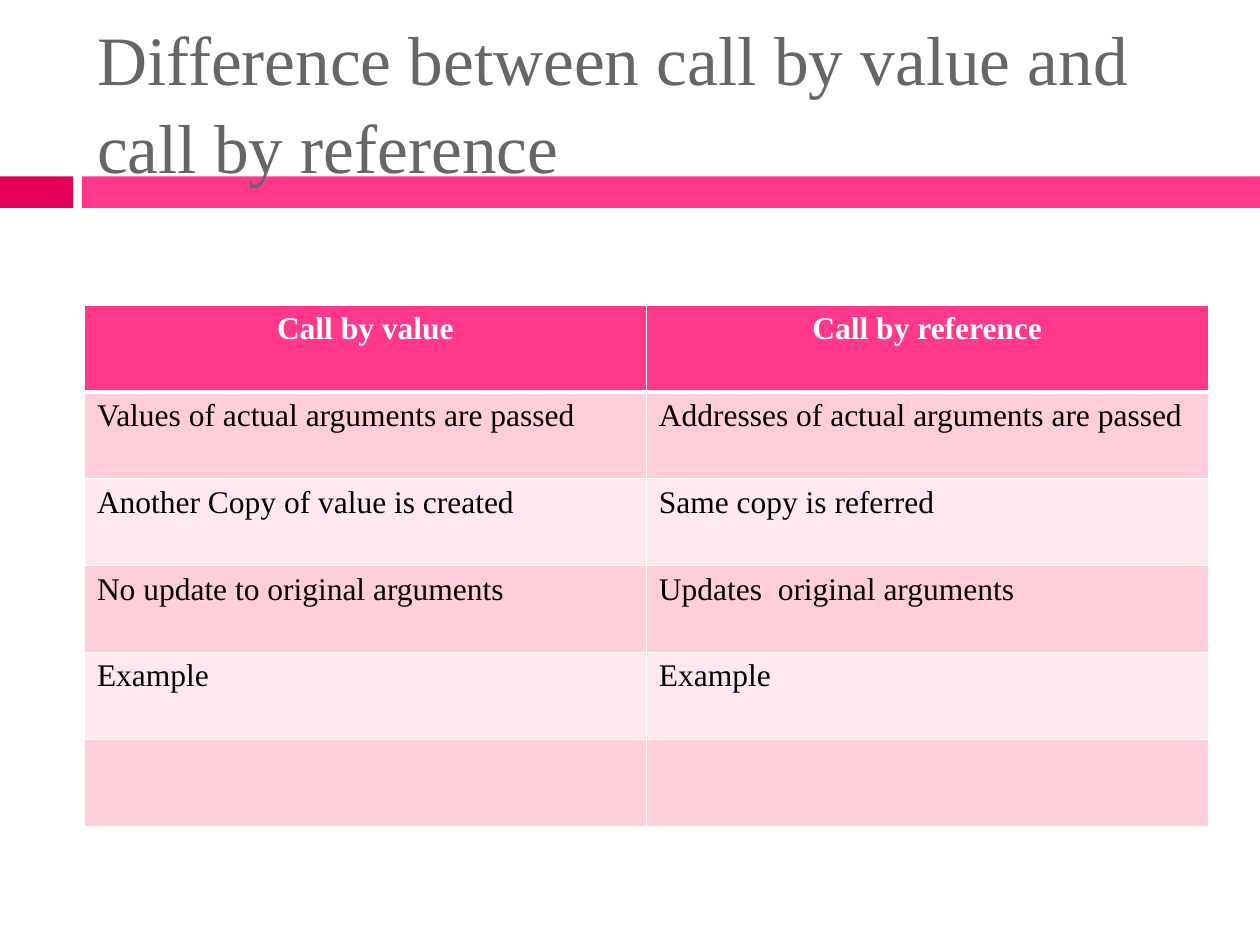
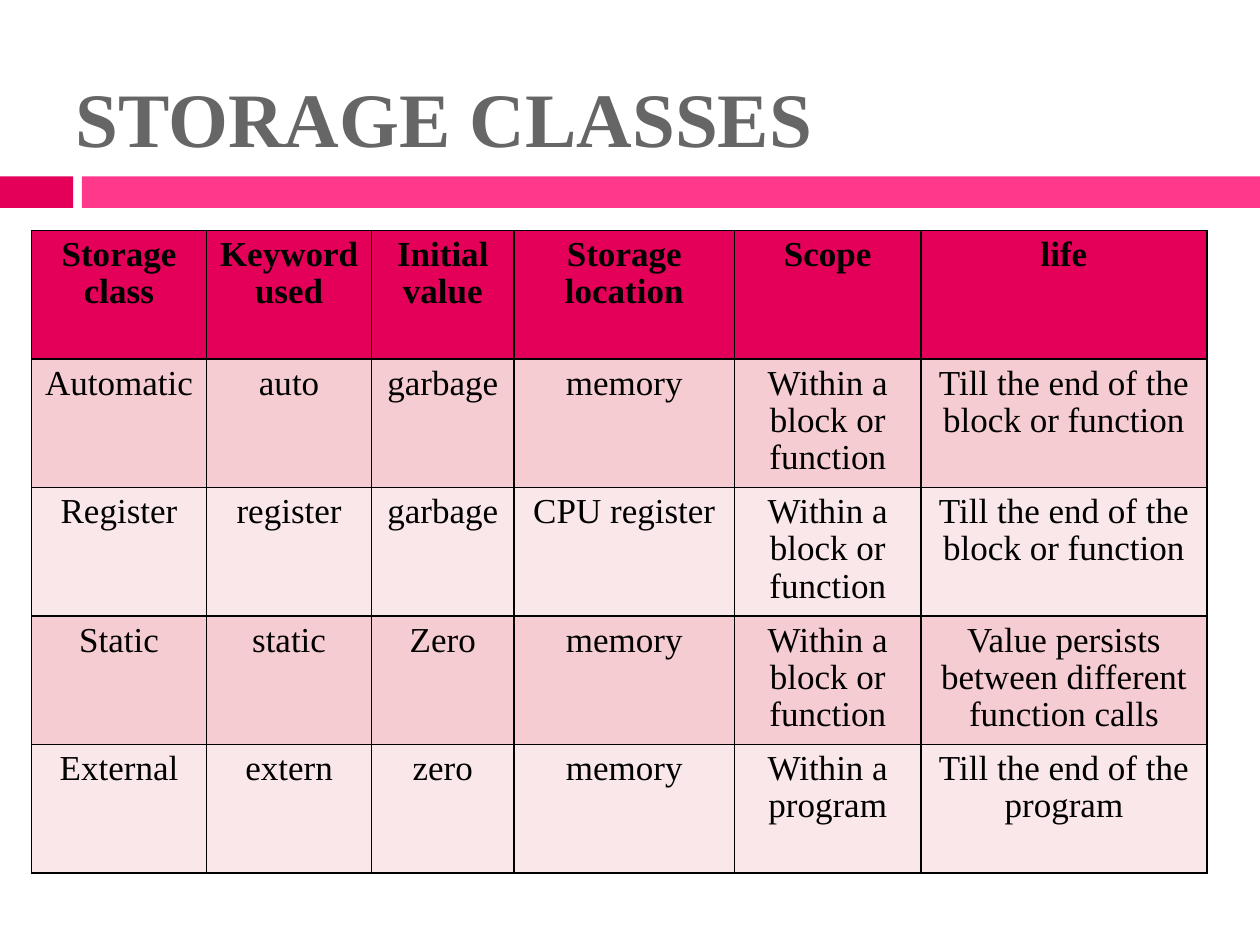
from lxml.etree import SubElement
from pptx import Presentation
from pptx.dml.color import RGBColor
from pptx.enum.shapes import MSO_SHAPE as Preset
from pptx.enum.text import MSO_ANCHOR as Anchor, MSO_AUTO_SIZE as AutoSize, PP_ALIGN as Align
from pptx.oxml.ns import qn
from pptx.util import Inches, Pt

# Shared style
FONT = "Times New Roman"
CRIMSON, PINK, GREY = "E40059", "FF388C", "666666"
BLACK, WHITE = "000000", "FFFFFF"
TITLE_ONLY = 5
BANDS = [(0, 0.58, CRIMSON), (0.65, 9.35, PINK)]
BAND_TOP, BAND_HEIGHT = 1.4, 0.25


def color(hex_string):
    return RGBColor.from_string(hex_string)


def write(frame, text, size, ink=BLACK, bold=False, align=Align.LEFT, spacing=None):
    """Put one formatted paragraph in a text frame."""
    paragraph = frame.paragraphs[0]
    paragraph.alignment = align
    paragraph.line_spacing = spacing
    run = paragraph.add_run()
    run.text = text
    run.font.name = FONT
    run.font.size = Pt(size)
    run.font.bold = bold
    run.font.color.rgb = color(ink)


def set_border(cell, side, ink, width):
    properties = cell._tc.get_or_add_tcPr()
    line = SubElement(properties, qn(f"a:ln{side}"), w=str(Pt(width)))
    fill = SubElement(line, qn("a:solidFill"))
    SubElement(fill, qn("a:srgbClr"), val=ink)


class Deck:
    def __init__(self):
        self.presentation = Presentation()
        self.presentation.slide_width = Inches(10)
        self.presentation.slide_height = Inches(7.5)
        self.slide = None

    def add_slide(self):
        layout = self.presentation.slide_layouts[TITLE_ONLY]
        self.slide = self.presentation.slides.add_slide(layout)
        for left, width, fill in BANDS:
            self.band(left, width, fill)

    def band(self, left, width, fill):
        shape = self.slide.shapes.add_shape(
            Preset.RECTANGLE, Inches(left), Inches(BAND_TOP), Inches(width), Inches(BAND_HEIGHT))
        shape.shadow.inherit = False
        shape.fill.solid()
        shape.fill.fore_color.rgb = color(fill)
        shape.line.fill.background()
        # The title overlaps the bands, so they go behind it
        self.slide.shapes.title._element.addprevious(shape._element)

    def title(self, text, box, **style):
        title = self.slide.shapes.title
        title.left, title.top, title.width, title.height = map(Inches, box)
        frame = title.text_frame
        frame.word_wrap = True
        frame.auto_size = AutoSize.NONE
        frame.vertical_anchor = Anchor.MIDDLE
        write(frame, text, ink=GREY, **style)

    def table(self, rows, left, top, widths, row_height, header_fill, stripes, border,
              header_style, body_style, header_rule=1):
        table = self.slide.shapes.add_table(
            len(rows), len(widths), Inches(left), Inches(top),
            Inches(sum(widths)), Inches(row_height * len(rows))).table
        for column, width in zip(table.columns, widths):
            column.width = Inches(width)
        for index, texts in enumerate(rows):
            table.rows[index].height = Inches(row_height)
            fill = stripes[(index - 1) % 2] if index else header_fill
            style = body_style if index else header_style
            # The rule under the header belongs to both rows it divides
            rules = {"L": 1, "R": 1,
                     "T": header_rule if index == 1 else 1,
                     "B": header_rule if index == 0 else 1}
            for column, text in enumerate(texts):
                cell = table.cell(index, column)
                for side, width in rules.items():
                    set_border(cell, side, border, width)
                cell.fill.solid()
                cell.fill.fore_color.rgb = color(fill)
                if text:
                    write(cell.text_frame, text, **style)


def add_call_comparison(deck):
    deck.add_slide()
    deck.title("Difference between call by value and call by reference",
               (0.67, 0.25, 8.92, 1.08), size=39.6, spacing=1.06)
    rows = [
        ("Call by value", "Call by reference"),
        ("Values of actual arguments are passed", "Addresses of actual arguments are passed"),
        ("Another Copy of value is created", "Same copy is referred"),
        ("No update to original arguments", "Updates  original arguments"),
        ("Example", "Example"),
        ("", ""),
    ]
    deck.table(rows, 0.67, 2.42, [4.46] * 2, 0.69, PINK, ("FFCEDA", "FFE8EE"), WHITE,
               header_style=dict(size=18, ink=WHITE, bold=True, align=Align.CENTER),
               body_style=dict(size=18), header_rule=3)


def add_storage_classes(deck):
    deck.add_slide()
    deck.title("STORAGE CLASSES", (0.5, 0.3, 7.58, 1.25), size=44, bold=True)
    block_scope = "Within a block or function"
    block_life = "Till the end of the block or function"
    rows = [
        ("Storage class", "Keyword used", "Initial value", "Storage location", "Scope", "life"),
        ("Automatic", "auto", "garbage", "memory", block_scope, block_life),
        ("Register", "register", "garbage", "CPU register", block_scope, block_life),
        ("Static", "static", "Zero", "memory", block_scope,
         "Value persists between different function calls"),
        ("External", "extern", "zero", "memory", "Within a program", "Till the end of the program"),
    ]
    body_style = dict(size=20, align=Align.CENTER, spacing=0.96)
    deck.table(rows, 0.25, 1.83, [1.39, 1.31, 1.13, 1.75, 1.48, 2.27], 1.02,
               CRIMSON, ("F5CCD1", "FAE7EA"), BLACK,
               header_style=dict(body_style, bold=True), body_style=body_style)


def main():
    deck = Deck()
    add_call_comparison(deck)
    add_storage_classes(deck)
    deck.presentation.save("out.pptx")


if __name__ == "__main__":
    main()
